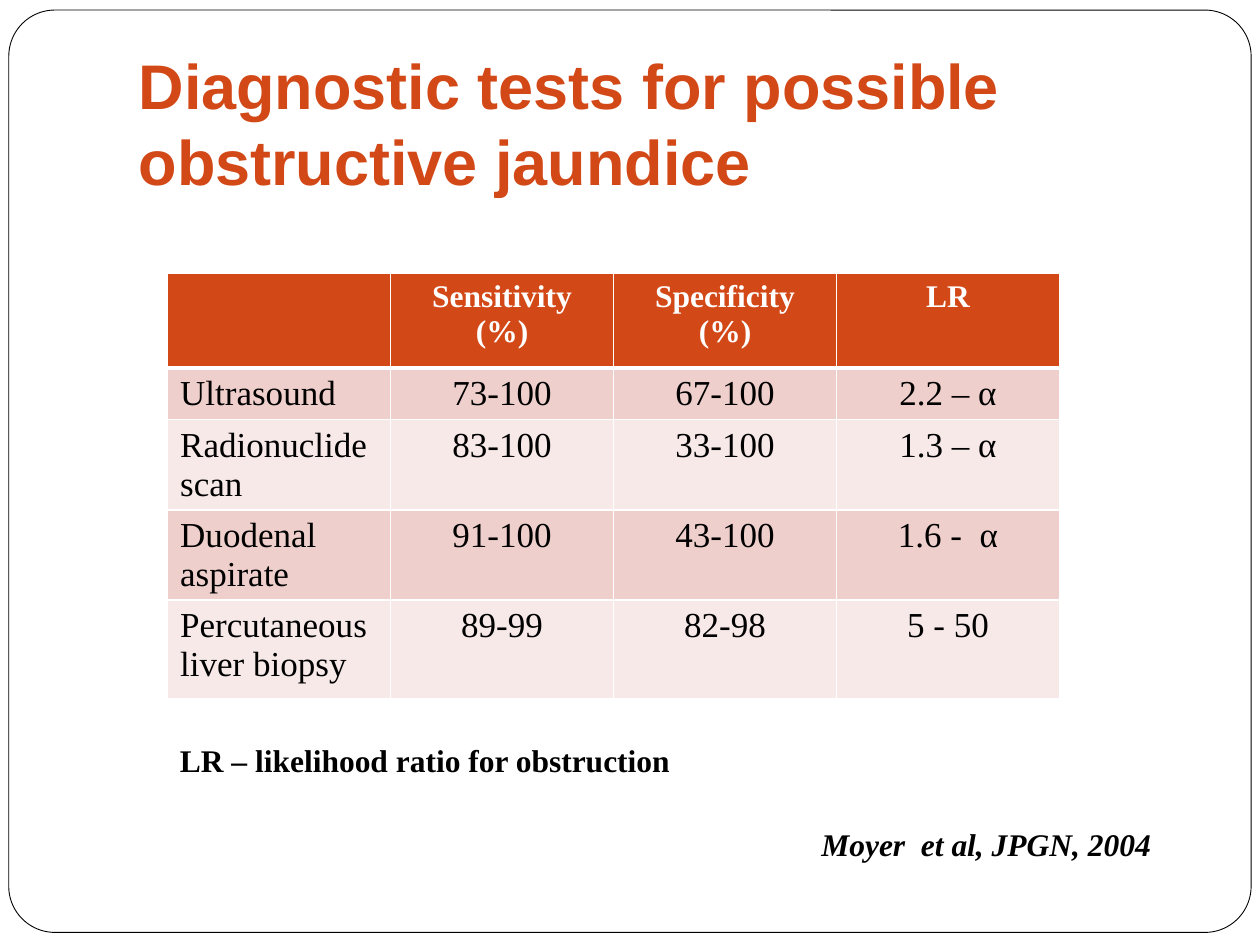
from lxml import etree
from pptx import Presentation
from pptx.dml.color import RGBColor
from pptx.enum.shapes import MSO_SHAPE
from pptx.enum.text import MSO_ANCHOR, MSO_AUTO_SIZE, PP_ALIGN
from pptx.oxml.ns import qn
from pptx.util import Inches, Pt

ROUNDED = MSO_SHAPE.ROUNDED_RECTANGLE
BOTTOM = MSO_ANCHOR.BOTTOM
NO_FIT, GROW = MSO_AUTO_SIZE.NONE, MSO_AUTO_SIZE.SHAPE_TO_FIT_TEXT
LEFT, CENTER = PP_ALIGN.LEFT, PP_ALIGN.CENTER

TITLE_ONLY = 5
ORANGE, WHITE, BLACK = "D34817", "FFFFFF", "000000"
BANDS = ("EFCFCC", "F7E9E8")
SERIF = "Times New Roman"

TITLE_FONT = {"name": "Arial", "size": Pt(36), "bold": True, "italic": False}
HEADER_FONT = {"name": SERIF, "size": Pt(18), "bold": True}
BODY_FONT = {"name": SERIF, "size": Pt(20), "bold": False}
NOTE_FONT = {"name": SERIF, "size": Pt(18), "bold": True}
CITATION_FONT = {**NOTE_FONT, "italic": True}

TESTS = (
    ("", "Sensitivity (%)", "Specificity (%)", "LR"),
    ("Ultrasound", "73-100", "67-100", "2.2 – α"),
    ("Radionuclide scan", "83-100", "33-100", "1.3 – α"),
    ("Duodenal aspirate", "91-100", "43-100", "1.6 -  α"),
    ("Percutaneous liver biopsy", "89-99", "82-98", "5 - 50"),
)
ROW_HEIGHTS = (0.75, 0.41, 0.41, 0.41, 0.78)


def rgb(hex_color):
    return RGBColor.from_string(hex_color)


def inches(box):
    return [Inches(length) for length in box]


def write(frame, text, font_format, color, align=LEFT):
    paragraph = frame.paragraphs[0]
    paragraph.alignment = align
    # An empty cell keeps its font on the paragraph
    target = paragraph.add_run() if text else paragraph
    if text:
        target.text = text
    for name, value in font_format.items():
        setattr(target.font, name, value)
    target.font.color.rgb = rgb(color)


def add_title(slide, box, text):
    title = slide.shapes.title
    title.left, title.top, title.width, title.height = inches(box)
    frame = title.text_frame
    frame_format = {
        "vertical_anchor": BOTTOM, "auto_size": NO_FIT, "word_wrap": True,
        "margin_left": Inches(0.1), "margin_right": Inches(0.1),
        "margin_top": Inches(0.05), "margin_bottom": Inches(0.1),
    }
    for name, value in frame_format.items():
        setattr(frame, name, value)
    write(frame, text, TITLE_FONT, ORANGE)


def add_page_border(slide, box):
    """Draw the rounded border behind the title."""
    border = slide.shapes.add_shape(ROUNDED, *inches(box))
    border.adjustments[0] = 0.05
    border.shadow.inherit = False
    border.fill.solid()
    border.fill.fore_color.rgb = rgb(WHITE)
    border.line.color.rgb = rgb(BLACK)
    border.line.width = Pt(0.5)
    slide.shapes.title.element.addprevious(border.element)


def set_borders(cell, widths):
    """Put white lines on the cell; widths maps each side (L, R, T, B) to points."""
    properties = cell._tc.get_or_add_tcPr()
    for position, (side, width) in enumerate(widths.items()):
        line = etree.Element(qn(f"a:ln{side}"), w=str(Pt(width)))
        fill = etree.SubElement(line, qn("a:solidFill"))
        etree.SubElement(fill, qn("a:srgbClr"), val=WHITE)
        properties.insert(position, line)


def add_tests_table(slide, box):
    table = slide.shapes.add_table(len(TESTS), len(TESTS[0]), *inches(box)).table
    for column in table.columns:
        column.width = Inches(box[2] / len(TESTS[0]))
    for row_index, values in enumerate(TESTS):
        is_header = row_index == 0
        table.rows[row_index].height = Inches(ROW_HEIGHTS[row_index])
        background = ORANGE if is_header else BANDS[(row_index - 1) % 2]
        font_format = HEADER_FONT if is_header else BODY_FONT
        color = WHITE if is_header else BLACK
        widths = {"L": 1, "R": 1, "T": 3 if row_index == 1 else 1,
                  "B": 3 if is_header else 1}
        for column_index, value in enumerate(values):
            cell = table.cell(row_index, column_index)
            cell.fill.solid()
            cell.fill.fore_color.rgb = rgb(background)
            set_borders(cell, widths)
            align = CENTER if column_index else LEFT
            write(cell.text_frame, value, font_format, color, align)


def add_note(slide, box, text, font_format):
    frame = slide.shapes.add_textbox(*inches(box)).text_frame
    frame.word_wrap = False
    frame.auto_size = GROW
    write(frame, text, font_format, BLACK)


def build_tests_slide(presentation):
    slide = presentation.slides.add_slide(presentation.slide_layouts[TITLE_ONLY])
    add_page_border(slide, (0.07, 0.08, 9.86, 7.32))
    add_title(slide, (1, 0.42, 8.5, 1.25),
              "Diagnostic tests for possible obstructive jaundice")
    add_tests_table(slide, (1.33, 2.17, 7.08, 3.5))
    add_note(slide, (6.42, 6.5, 2.85, 0.4), "Moyer  et al, JPGN, 2004", CITATION_FONT)
    add_note(slide, (1.33, 5.83, 4.13, 0.4),
             "LR – likelihood ratio for obstruction", NOTE_FONT)


def main():
    presentation = Presentation()
    presentation.slide_width, presentation.slide_height = inches((10, 7.5))
    build_tests_slide(presentation)
    presentation.save("out.pptx")


if __name__ == "__main__":
    main()
